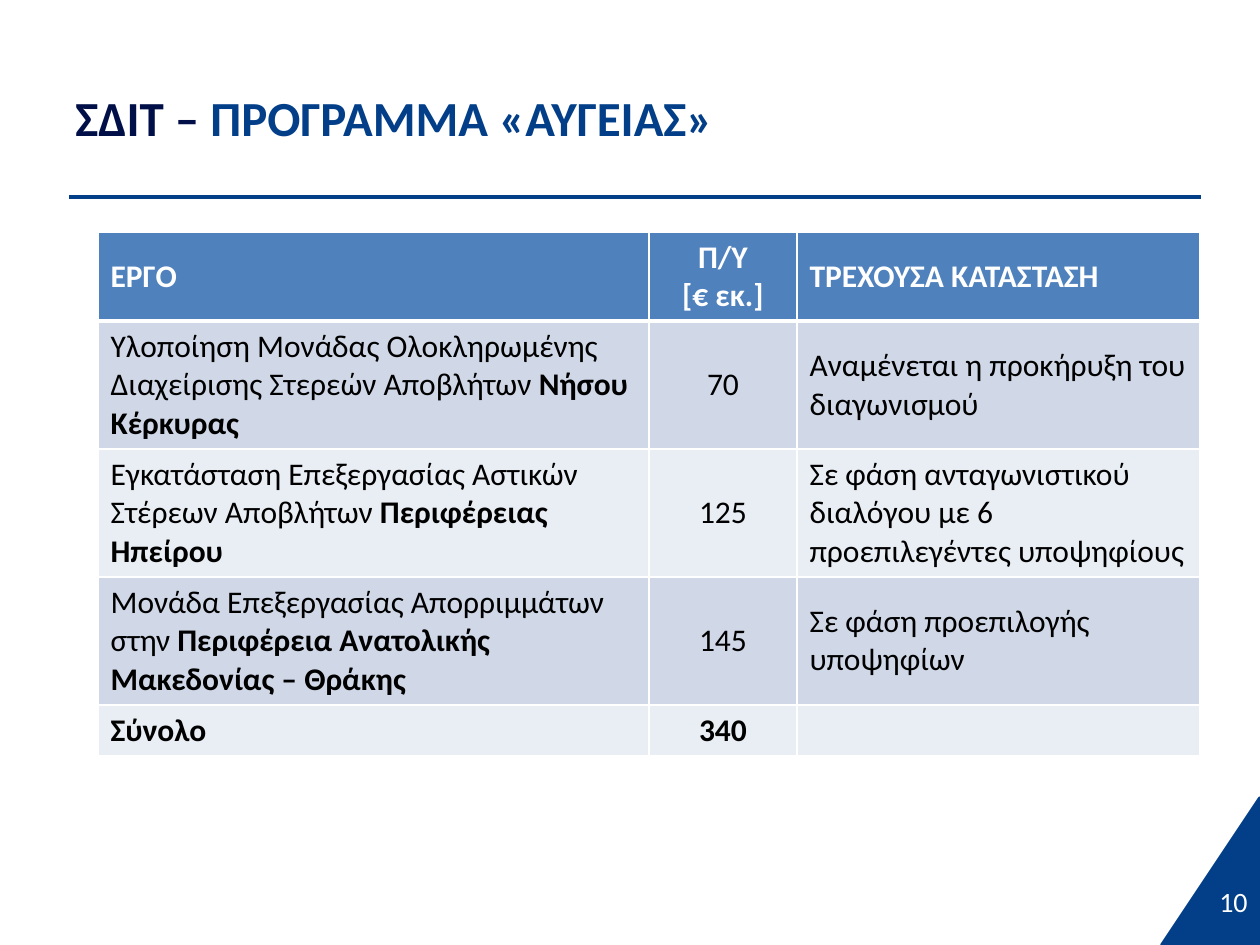
from lxml.etree import SubElement
from pptx import Presentation
from pptx.dml.color import RGBColor
from pptx.enum.shapes import MSO_CONNECTOR, MSO_SHAPE
from pptx.enum.text import MSO_ANCHOR, PP_ALIGN
from pptx.oxml.ns import qn
from pptx.util import Emu, Pt

PX_PER_INCH = 126
FONT = "Calibri"
NAVY = RGBColor(0x00, 0x0F, 0x47)
BLUE = RGBColor(0x02, 0x3F, 0x88)
HEADER_BLUE = RGBColor(0x4F, 0x81, 0xBD)
BAND_DARK = RGBColor(0xD0, 0xD8, 0xE8)
BAND_LIGHT = RGBColor(0xE9, 0xED, 0xF4)
WHITE = RGBColor(0xFF, 0xFF, 0xFF)
BLACK = RGBColor(0x00, 0x00, 0x00)

COLUMN_WIDTHS = [551, 148, 403]
ROW_HEIGHTS = [89, 128, 128, 128, 50]
COLUMN_ALIGNS = [PP_ALIGN.LEFT, PP_ALIGN.CENTER, PP_ALIGN.LEFT]

# Each cell is a list of paragraphs, each paragraph a list of (text, bold) runs.
ROWS = [
    [[[("ΕΡΓΟ", True)]],
     [[("Π/Υ", True)], [("[€ εκ.]", True)]],
     [[("ΤΡΕΧΟΥΣΑ ΚΑΤΑΣΤΑΣΗ", True)]]],
    [[[("Υλοποίηση Μονάδας Ολοκληρωμένης Διαχείρισης Στερεών Αποβλήτων ", False),
       ("Νήσου Κέρκυρας", True)]],
     [[("70", False)]],
     [[("Αναμένεται η προκήρυξη του διαγωνισμού", False)]]],
    [[[("Εγκατάσταση Επεξεργασίας Αστικών Στέρεων Αποβλήτων ", False),
       ("Περιφέρειας Ηπείρου", True)]],
     [[("125", False)]],
     [[("Σε φάση ανταγωνιστικού διαλόγου με 6 προεπιλεγέντες υποψηφίους", False)]]],
    [[[("Μονάδα Επεξεργασίας Απορριμμάτων στην ", False),
       ("Περιφέρεια Ανατολικής Μακεδονίας – Θράκης", True)]],
     [[("145", False)]],
     [[("Σε φάση προεπιλογής υποψηφίων", False)]]],
    [[[("Σύνολο", True)]], [[("340", True)]], []],
]


def px(length):
    return Emu(round(length * 914400 / PX_PER_INCH))


def place(box):
    return [px(length) for length in box]


def add_span(para, text, size, color, bold=False):
    span = para.add_run()
    span.text = text
    span.font.name = FONT
    span.font.size = Pt(size)
    span.font.bold = bold
    span.font.color.rgb = color


def add_text(page, box, spans, size, align=PP_ALIGN.LEFT):
    frame = page.shapes.add_textbox(*place(box)).text_frame
    frame.word_wrap = True
    frame.vertical_anchor = MSO_ANCHOR.MIDDLE
    para = frame.paragraphs[0]
    para.alignment = align
    for text, color, bold in spans:
        add_span(para, text, size, color, bold)


def add_heading(page, box):
    left, top, width, height = box
    # Rule under the title
    rule_left, rule_top, rule_right = left + 6, top + height + 1, left + width + 4
    rule = page.shapes.add_connector(
        MSO_CONNECTOR.STRAIGHT,
        px(rule_left), px(rule_top), px(rule_right), px(rule_top))
    rule.line.color.rgb = BLUE
    rule.line.width = Pt(2.75)
    SubElement(rule._element.spPr, qn("a:effectLst"))
    # Title
    add_text(page, box, [("ΣΔΙΤ – ", NAVY, True),
                         ("ΠΡΟΓΡΑΜΜΑ «ΑΥΓΕΙΑΣ»", BLUE, True)], 28)


def add_page_corner(page, box):
    left, top, width, height = box
    # Triangle with its right angle at the lower right
    corner = page.shapes.add_shape(MSO_SHAPE.RIGHT_TRIANGLE, *place(box))
    corner._element.spPr.get_or_add_xfrm().set("flipH", "1")
    corner.shadow.inherit = False
    corner.fill.solid()
    corner.fill.fore_color.rgb = BLUE
    corner.line.color.rgb = BLUE
    corner.line.width = Pt(2)
    # Page number
    number_box = (left + width - 294, top + height - 69, 294, 50)
    add_text(page, number_box, [("10", WHITE, False)], 16, PP_ALIGN.RIGHT)


def set_borders(cell, widths):
    properties = cell._tc.get_or_add_tcPr()
    for position, (side, width) in enumerate(widths.items()):
        line = SubElement(properties, qn(f"a:ln{side}"), w=str(Pt(width)))
        fill = SubElement(line, qn("a:solidFill"))
        SubElement(fill, qn("a:srgbClr"), val=str(WHITE))
        properties.insert(position, line)


def fill_cell(cell, paragraphs, align, fill, color):
    cell.fill.solid()
    cell.fill.fore_color.rgb = fill
    cell.vertical_anchor = MSO_ANCHOR.MIDDLE
    frame = cell.text_frame
    for index, spans in enumerate(paragraphs):
        para = frame.add_paragraph() if index else frame.paragraphs[0]
        para.alignment = align
        for text, bold in spans:
            add_span(para, text, 18, color, bold)


def add_project_table(page, box):
    table = page.shapes.add_table(len(ROWS), len(COLUMN_WIDTHS), *place(box)).table
    for column, width in zip(table.columns, COLUMN_WIDTHS):
        column.width = px(width)
    for row, height in zip(table.rows, ROW_HEIGHTS):
        row.height = px(height)
    for r, contents in enumerate(ROWS):
        band = BAND_DARK if r % 2 else BAND_LIGHT
        fill, color = (band, BLACK) if r else (HEADER_BLUE, WHITE)
        for c, paragraphs in enumerate(contents):
            cell = table.cell(r, c)
            fill_cell(cell, paragraphs, COLUMN_ALIGNS[c], fill, color)
            # A thicker line parts the header from the body
            set_borders(cell, {"L": 1, "R": 1,
                               "T": 3 if r == 1 else 1,
                               "B": 3 if r == 0 else 1})


def main():
    deck = Presentation()
    deck.slide_width, deck.slide_height = px(1260), px(945)
    page = deck.slides.add_slide(deck.slide_layouts[6])
    add_page_corner(page, (1162, 798, 98, 147))
    add_heading(page, (63, 38, 1134, 158))
    add_project_table(page, (98, 232, sum(COLUMN_WIDTHS), sum(ROW_HEIGHTS)))
    deck.save("out.pptx")


if __name__ == "__main__":
    main()
